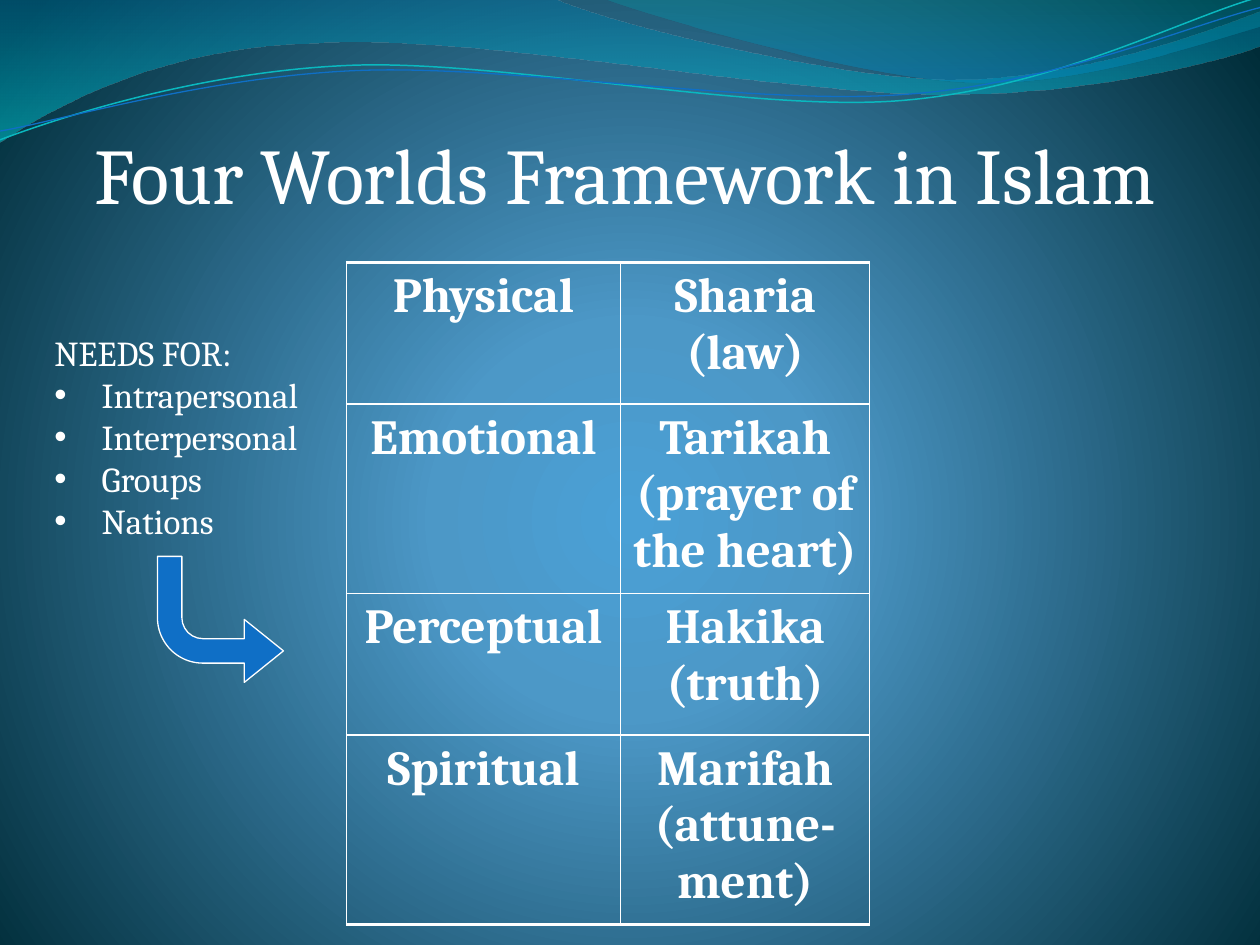
from dataclasses import dataclass

from lxml import etree
from pptx import Presentation
from pptx.dml.color import RGBColor
from pptx.enum.shapes import MSO_SHAPE
from pptx.enum.text import MSO_ANCHOR, PP_ALIGN
from pptx.oxml.ns import qn
from pptx.util import Pt

BENT_ARROW = MSO_SHAPE.BENT_ARROW
CENTER, LEFT = PP_ALIGN.CENTER, PP_ALIGN.LEFT
TOP, BOTTOM = MSO_ANCHOR.TOP, MSO_ANCHOR.BOTTOM


@dataclass(frozen=True)
class Theme:
    font: str = "Cambria"
    text: str = "FFFFFF"
    accent: str = "0F6FC6"
    teal: str = "0AB8BF"
    backdrop: tuple = ((0, "4AA0D6", 100), (25, "4C98C7", 100), (100, "002C38", 100))
    wide_wave: tuple = ((0, "0074A1", 45), (100, "00C6CF", 55))
    corner_wave: tuple = ((0, "00A1A9", 30), (80, "008BBF", 45))
    title_size: float = 45
    table_size: float = 28
    list_size: float = 20
    thin: float = 0.75
    rule: float = 1
    edge: float = 2.25


WIDE_WAVE = (
    (0, 0),
    [[(316.8, -0.7)],
     [(342.7, 12.2), (478.1, 45.4), (545.8, 45.4)],
     [(614.2, 45.4), (689.8, 18.7), (720, 6.5)],
     [(720.7, 25.9)],
     [(707.8, 31.7), (626.4, 54.7), (537.1, 54)],
     [(447.8, 54), (275, 20.2), (185, 24.5)],
     [(92.9, 25.9), (33.1, 59.8), (-0.7, 81.4)]])
CORNER_WAVE = (
    (344.9, -0.7),
    [[(366.5, 7.9), (491, 44.6), (553.7, 46.8)],
     [(616.3, 49.7), (691.9, 23), (720, 15.1)],
     [(720, 0)]])
TEAL_CURVE = (
    (0, 79.9),
    [[(34.6, 67), (113.8, 41), (199.4, 37.4)],
     [(284.4, 33.8), (427, 64.1), (513.4, 57.6)],
     [(599.8, 51.1), (675.4, 10.8), (718.6, -1.4)]])
BLUE_CURVE = (
    (0, 74.9),
    [[(33.8, 69.1), (118.1, 43.9), (203.8, 40.3)],
     [(290.2, 36.7), (429.8, 60.5), (516.2, 54)],
     [(601.9, 48.2), (677.5, 15.1), (720, 4.3)]])

WORLDS = [
    ("Physical", "Sharia (law)"),
    ("Emotional", "Tarikah (prayer of the heart)"),
    ("Perceptual", "Hakika (truth)"),
    ("Spiritual", "Marifah (attune-ment)"),
]
NEEDS = ["Intrapersonal", "Interpersonal", "Groups", "Nations"]


def add(parent, tag, **attrs):
    return etree.SubElement(parent, qn(tag), {k: str(v) for k, v in attrs.items()})


class SlideBuilder:
    """Draws styled elements on the current slide."""

    def __init__(self, slide, theme):
        self.s, self.t = slide, theme

    def grade(self, fill, stops):
        fill.gradient()
        grad = fill._fill._gradFill
        for child in list(grad):
            grad.remove(child)
        gs_list = add(grad, "a:gsLst")
        for pos, color, alpha in stops:
            clr = add(add(gs_list, "a:gs", pos=pos * 1000), "a:srgbClr", val=color)
            add(clr, "a:alpha", val=alpha * 1000)
        return grad

    def background(self, stops):
        shade = add(self.grade(self.s.background.fill, stops), "a:path", path="circle")
        add(shade, "a:fillToRect", l=10000, t=110000, r=10000, b=100000)

    def outline(self, sp, color, width):
        sp.line.color.rgb = RGBColor.from_string(color)
        sp.line.width = Pt(width)

    def curve(self, start, segments, closed=False):
        fb = self.s.shapes.build_freeform(Pt(start[0]), Pt(start[1]))
        fb.add_line_segments(
            [(Pt(x), Pt(y)) for seg in segments for x, y in seg], close=closed)
        sp = fb.convert_to_shape()
        sp.shadow.inherit = False
        lines = iter(list(sp._element.iter(qn("a:lnTo"))))
        for seg in segments:
            first, *rest = [next(lines) for _ in seg]
            if rest:
                first.tag = qn("a:cubicBezTo")
            for ln in rest:
                first.append(ln[0])
                ln.getparent().remove(ln)
        return sp

    def wave(self, outline, stops):
        sp = self.curve(*outline, closed=True)
        add(self.grade(sp.fill, stops), "a:lin", ang=5400000, scaled=0)
        sp.line.fill.background()

    def stroke(self, outline, color, width):
        sp = self.curve(*outline)
        sp.fill.background()
        self.outline(sp, color, width)

    def style(self, p, size, bold=False, align=LEFT):
        p.alignment = align
        for r in p.runs:
            r.font.name, r.font.size, r.font.bold = self.t.font, Pt(size), bold
            r.font.color.rgb = RGBColor.from_string(self.t.text)

    def text(self, box, lines, size, anchor=TOP, insets=(7.2, 3.6, 7.2, 3.6), bullets_from=1):
        tf = self.s.shapes.add_textbox(*map(Pt, box)).text_frame
        tf.word_wrap, tf.vertical_anchor = True, anchor
        tf.margin_left, tf.margin_top, tf.margin_right, tf.margin_bottom = map(Pt, insets)
        tf.text = "\n".join(lines)
        for i, p in enumerate(tf.paragraphs):
            if i >= bullets_from:
                pPr = p._p.get_or_add_pPr()
                pPr.set("marL", str(Pt(27)))
                pPr.set("indent", str(-Pt(27)))
                add(pPr, "a:buFont", typeface="Arial")
                add(pPr, "a:buChar", char="•")
            self.style(p, size)

    def borders(self, cell, **widths):
        tcPr = cell._tc.get_or_add_tcPr()
        for side, width in widths.items():
            ln = add(tcPr, f"a:ln{side}", w=Pt(width))
            add(add(ln, "a:solidFill"), "a:srgbClr", val=self.t.text)

    def table(self, left, top, widths, heights, rows):
        frame = self.s.shapes.add_table(len(rows), len(widths), Pt(left), Pt(top),
                                        Pt(sum(widths)), Pt(sum(heights)))
        tbl = frame.table
        tbl.first_row = tbl.horz_banding = False
        for col, width in zip(tbl.columns, widths):
            col.width = Pt(width)
        for i, (row, height, values) in enumerate(zip(tbl.rows, heights, rows)):
            row.height = Pt(height)
            upper = self.t.edge if i == 0 else self.t.rule
            lower = self.t.edge if i == len(rows) - 1 else self.t.rule
            for cell, value in zip(row.cells, values):
                cell.text_frame.text = value
                self.style(cell.text_frame.paragraphs[0], self.t.table_size, True, CENTER)
                self.borders(cell, L=self.t.rule, R=self.t.rule, T=upper, B=lower)
                cell.fill.background()

    def bent_arrow(self, box, adjustments):
        sp = self.s.shapes.add_shape(BENT_ARROW, *map(Pt, box))
        sp.shadow.inherit = False
        for i, value in enumerate(adjustments):
            sp.adjustments[i] = value
        sp._element.spPr.get_or_add_xfrm().set("flipV", "1")
        sp.fill.solid()
        sp.fill.fore_color.rgb = RGBColor.from_string(self.t.accent)
        self.outline(sp, self.t.text, self.t.thin)


def main():
    prs = Presentation()
    prs.slide_width, prs.slide_height = Pt(720), Pt(540)
    theme = Theme()
    b = SlideBuilder(prs.slides.add_slide(prs.slide_layouts[6]), theme)
    b.background(theme.backdrop)
    b.wave(WIDE_WAVE, theme.wide_wave)
    b.wave(CORNER_WAVE, theme.corner_wave)
    b.stroke(TEAL_CURVE, theme.teal, 0.85)
    b.stroke(BLUE_CURVE, theme.accent, theme.thin)
    b.text((54, 36, 612, 90), ["Four Worlds Framework in Islam"], theme.title_size,
           BOTTOM, (0, 3.6, 0, 0))
    b.table(198, 150, (156.6, 142.4), (81, 108, 81, 108), WORLDS)
    b.text((24, 186, 156, 128), ["NEEDS FOR:", *NEEDS], theme.list_size)
    b.bent_arrow((90, 318, 72, 72), (0.194, 0.25, 0.311, 0.361))
    prs.save("out.pptx")


if __name__ == "__main__":
    main()
